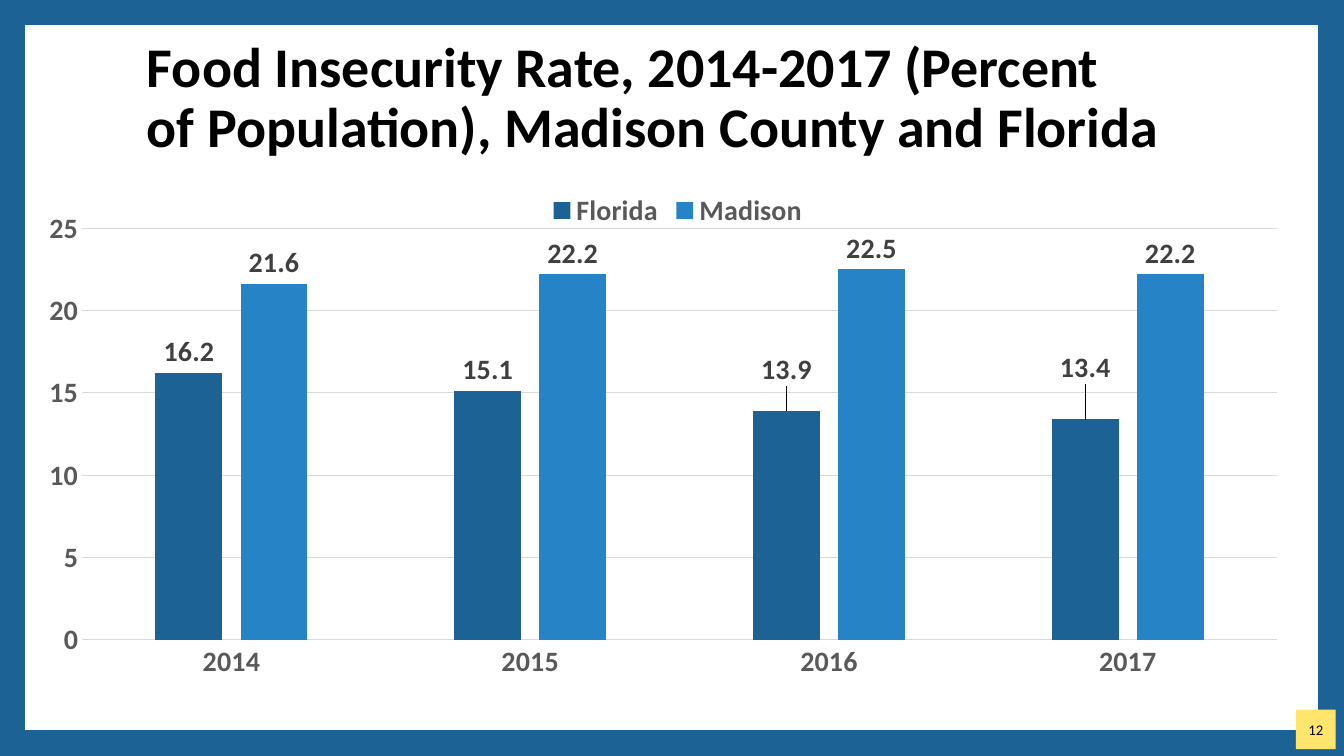
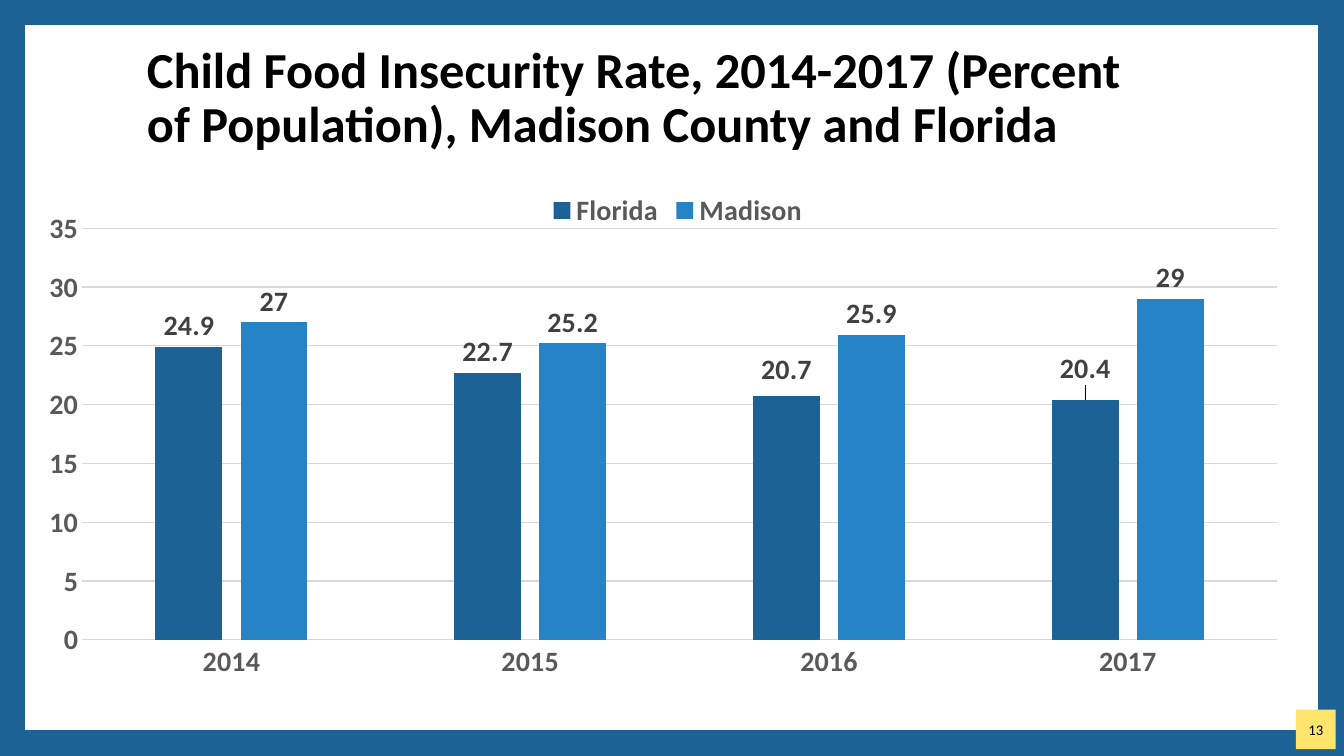
"""Build two column-chart slides on food insecurity in Madison County and Florida."""
from copy import deepcopy
from dataclasses import dataclass

from lxml import etree
from pptx import Presentation
from pptx.chart import data as cd
from pptx.dml.color import RGBColor
from pptx.enum import chart as ce, shapes, text
from pptx.oxml import ns
from pptx.util import Cm, Pt

FONT = "Calibri"
COLORS = {
    "frame": "1C6294", "badge": "FFE56B", "text": "000000", "axis": "595959",
    "label": "404040", "grid": "D9D9D9", "Florida": "1C6294", "Madison": "2683C6",
}
YEARS = ("2014", "2015", "2016", "2017")


@dataclass(frozen=True)
class RateSlide:
    number: int
    title: str
    title_size: int
    axis_max: int
    rates: dict[str, tuple[float, ...]]
    label_lifts: dict[int, float]


SLIDES = (
    RateSlide(
        12, "Food Insecurity Rate, 2014-2017 (Percent \vof Population), Madison County and Florida",
        40, 25,
        {"Florida": (16.2, 15.1, 13.9, 13.4), "Madison": (21.6, 22.2, 22.5, 22.2)},
        {2: -0.04, 3: -0.06},
    ),
    RateSlide(
        13, "Child Food Insecurity Rate, 2014-2017 (Percent \vof Population), Madison County and Florida",
        36, 35,
        {"Florida": (24.9, 22.7, 20.7, 20.4), "Madison": (27, 25.2, 25.9, 29)},
        {2: -0.01, 3: -0.02},
    ),
)


def rgb(name: str) -> RGBColor:
    return RGBColor.from_string(COLORS[name])


def style(font, size: float, color: str, bold: bool = False) -> None:
    font.name, font.size, font.bold = FONT, Pt(size), bold
    font.color.rgb = rgb(color)


def write(tf, content: str, *, size: float, color: str = "text", bold: bool = False,
          align=text.PP_ALIGN.LEFT, spacing: float = 1.0) -> None:
    tf.word_wrap = True
    tf.auto_size = text.MSO_AUTO_SIZE.NONE
    tf.vertical_anchor = text.MSO_ANCHOR.MIDDLE
    p = tf.paragraphs[0]
    p.text, p.alignment, p.line_spacing = content, align, spacing
    for r in p.runs:
        style(r.font, size, color, bold)
    for br in p._p.findall(ns.qn("a:br")):
        br.append(deepcopy(p.runs[0]._r.rPr))


def set_layout(parent, index: int, **values) -> None:
    for old in parent.findall(ns.qn("c:layout")):
        parent.remove(old)
    layout = etree.Element(ns.qn("c:layout"))
    manual = etree.SubElement(layout, ns.qn("c:manualLayout"))
    for tag, value in values.items():
        etree.SubElement(manual, ns.qn(f"c:{tag}")).set("val", str(value))
    parent.insert(index, layout)


def add_frame(s) -> None:
    sp = s.shapes.add_shape(shapes.MSO_SHAPE.RECTANGLE, Cm(0.3), Cm(0.3), Cm(33.25), Cm(18.42))
    sp.shadow.inherit = False
    sp.fill.background()
    sp.line.color.rgb = rgb("frame")
    sp.line.width = Pt(19)
    etree.SubElement(sp.line._ln, ns.qn("a:miter")).set("lim", "800000")


def add_badge(s, number: int) -> None:
    sp = s.shapes.add_shape(shapes.MSO_SHAPE.RECTANGLE, Cm(32.66), Cm(17.88), Cm(1), Cm(1))
    sp.shadow.inherit = False
    sp.fill.solid()
    sp.fill.fore_color.rgb = rgb("badge")
    sp.line.fill.background()
    tf = sp.text_frame
    tf.margin_left = tf.margin_right = 0
    write(tf, str(number), size=10.5, align=text.PP_ALIGN.CENTER)


def set_title(s, content: str, size: int) -> None:
    sp = s.shapes.title
    sp.left, sp.top, sp.width, sp.height = Cm(3.45), Cm(1.17), Cm(29.21), Cm(2.67)
    write(sp.text_frame, content, size=size, bold=True, spacing=0.9)


def format_axes(chart, axis_max: int) -> None:
    for axis in (chart.category_axis, chart.value_axis):
        axis.major_tick_mark = axis.minor_tick_mark = ce.XL_TICK_MARK.NONE
        style(axis.tick_labels.font, 20, "axis", True)
    values = chart.value_axis
    values.minimum_scale, values.maximum_scale, values.major_unit = 0, axis_max, 5
    values.format.line.fill.background()
    values.has_major_gridlines = True
    for line in (chart.category_axis.format.line, values.major_gridlines.format.line):
        line.color.rgb = rgb("grid")
        line.width = Pt(0.75)


def format_series(series, lifts: dict[int, float]) -> None:
    series.format.fill.solid()
    series.format.fill.fore_color.rgb = rgb(series.name)
    labels = series.data_labels
    labels.show_value = True
    labels.position = ce.XL_LABEL_POSITION.OUTSIDE_END
    style(labels.font, 20, "label", True)
    for point, lift in lifts.items():
        label = series.points[point].data_label
        label.position = ce.XL_LABEL_POSITION.OUTSIDE_END
        style(label.font, 20, "label", True)
        set_layout(labels._element.xpath(f"c:dLbl[c:idx/@val='{point}']")[0], 1, x=0, y=lift)


def add_rate_chart(s, spec: RateSlide) -> None:
    data = cd.CategoryChartData()
    data.categories = YEARS
    for name, rates in spec.rates.items():
        data.add_series(name, rates)
    chart = s.shapes.add_chart(ce.XL_CHART_TYPE.COLUMN_CLUSTERED, Cm(1.09), Cm(4.47),
                               Cm(31.57), Cm(12.95), data).chart
    style(chart.font, 10, "text")
    chart.has_title = False
    chart.has_legend = True
    chart.legend.position = ce.XL_LEGEND_POSITION.BOTTOM
    chart.legend.include_in_layout = False
    style(chart.legend.font, 20, "axis", True)
    set_layout(chart.legend._element, 1, xMode="edge", yMode="edge", x=0.4, y=0.02)
    plot = chart.plots[0]
    plot.gap_width, plot.overlap, plot.vary_by_categories = 219, -27, False
    set_layout(chart._chartSpace.chart.plotArea, 0, layoutTarget="inner", xMode="edge",
               yMode="edge", x=0.031, y=0.099, w=0.954, h=0.801)
    format_axes(chart, spec.axis_max)
    for series in plot.series:
        format_series(series, spec.label_lifts if series.name == "Florida" else {})


def main() -> None:
    prs = Presentation()
    prs.slide_width, prs.slide_height = Cm(33.87), Cm(19.05)
    for spec in SLIDES:
        s = prs.slides.add_slide(prs.slide_layouts[5])
        add_frame(s)
        add_badge(s, spec.number)
        set_title(s, spec.title, spec.title_size)
        add_rate_chart(s, spec)
    prs.save("out.pptx")


if __name__ == "__main__":
    main()
